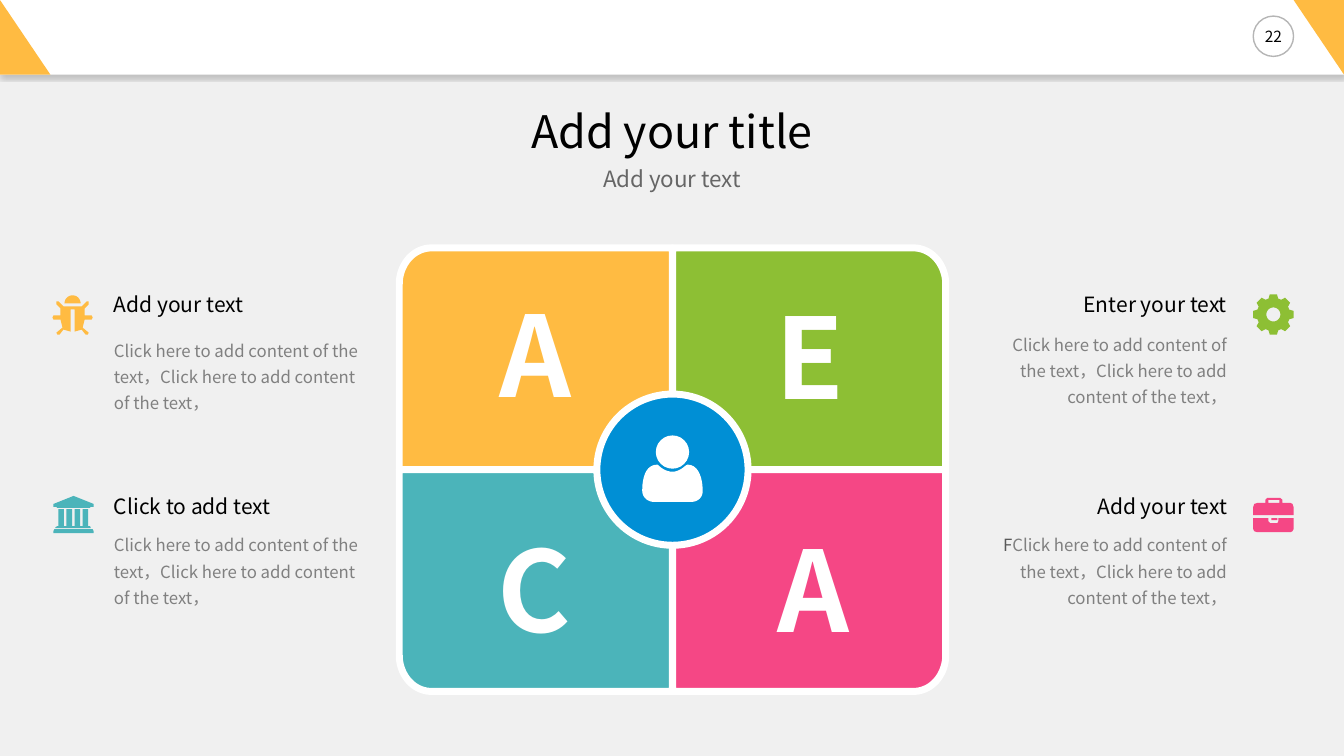
from dataclasses import dataclass
from math import cos, radians, sin

from lxml.etree import SubElement
from pptx import Presentation
from pptx.dml.color import RGBColor
from pptx.enum.shapes import MSO_SHAPE
from pptx.enum.text import MSO_ANCHOR, MSO_AUTO_SIZE, PP_ALIGN
from pptx.oxml.ns import qn
from pptx.util import Pt

PX = 9144  # EMU: 100 px to the inch
FINE = 20  # steps per px in free outlines
RECT, OVAL, WEDGE = MSO_SHAPE.RECTANGLE, MSO_SHAPE.OVAL, MSO_SHAPE.RIGHT_TRIANGLE
LEFT, MID, RIGHT = PP_ALIGN.LEFT, PP_ALIGN.CENTER, PP_ALIGN.RIGHT
TOP, HALF = MSO_ANCHOR.TOP, MSO_ANCHOR.MIDDLE
FIXED = MSO_AUTO_SIZE.NONE


@dataclass(frozen=True)
class Theme:
    font: str = "Noto Sans CJK JP"
    back: str = "F0F0F0"
    white: str = "FFFFFF"
    black: str = "000000"
    ring: str = "0D0D0D"
    dark: str = "595959"
    sub: str = "666666"
    gray: str = "808080"
    gold: str = "FFBB42"
    green: str = "8DBF34"
    teal: str = "4BB4BA"
    pink: str = "F54785"
    blue: str = "008FD5"
    huge: int = 80
    title: int = 32
    lead: int = 16
    head: int = 15
    body: int = 12
    page: int = 11
    edge: int = 5


def rgb(code):
    return RGBColor.from_string(code)


def box(x, y, w, h):
    return [(x, y), (x + w, y), (x + w, y + h), (x, y + h)]


def polar(x, y, rx, ry, deg):
    return x + rx * cos(radians(deg)), y + ry * sin(radians(deg))


def arc(x, y, rx, ry, start, end, steps=24):
    return [polar(x, y, rx, ry, start + (end - start) * i / steps)
            for i in range(steps + 1)]


def bend(pts, steps=10):
    """Sample a chain of cubic curves: a start, then three points for each."""
    out = [pts[0]]
    for k in range(0, len(pts) - 1, 3):
        for i in range(1, steps + 1):
            t = i / steps
            u = 1 - t
            mix = (u ** 3, 3 * u * u * t, 3 * u * t * t, t ** 3)
            out.append(tuple(sum(m * p[a] for m, p in zip(mix, pts[k:k + 4]))
                             for a in (0, 1)))
    return out


class Board:
    def __init__(self, deck, theme):
        self.theme = theme
        self.slide = deck.slides.add_slide(deck.slide_layouts[5])
        fill = self.slide.background.fill
        fill.solid()
        fill.fore_color.rgb = rgb(theme.back)

    def paint(self, shape, fill, line=None, width=0):
        shape.shadow.inherit = False
        shape.fill.solid()
        shape.fill.fore_color.rgb = rgb(fill)
        if line:
            shape.line.color.rgb = rgb(line)
            shape.line.width = Pt(width)
        else:
            shape.line.fill.background()
        return shape

    def shape(self, kind, area, *look):
        item = self.slide.shapes.add_shape(kind, *(v * PX for v in area))
        return self.paint(item, *look)

    def trace(self, paths, *look):
        """Draw closed outlines as one free shape."""
        fine = [[(x * FINE, y * FINE) for x, y in path] for path in paths]
        pen = self.slide.shapes.build_freeform(*fine[0][0], scale=PX / FINE)
        for i, path in enumerate(fine):
            if i:
                pen.move_to(*path[0])
            pen.add_line_segments(path[1:], close=True)
        return self.paint(pen.convert_to_shape(), *look)

    def label(self, shape, runs, size, align=MID, anchor=TOP, bold=False, **para):
        """Fill a shape with one paragraph of (text, colour) runs."""
        frame = shape.text_frame
        form = dict(word_wrap=True, auto_size=FIXED, vertical_anchor=anchor,
                    margin_left=0, margin_top=0, margin_right=0, margin_bottom=0)
        line = frame.paragraphs[0]
        for goal, vals in ((frame, form), (line, dict(alignment=align, **para))):
            for key, val in vals.items():
                setattr(goal, key, val)
        for text, tint in runs:
            run = line.add_run()
            run.text = text
            look = dict(name=self.theme.font, size=Pt(size), bold=bold)
            for key, val in look.items():
                setattr(run.font, key, val)
            run.font.color.rgb = rgb(tint)
        for props in shape.element.xpath(".//a:rPr"):
            SubElement(props, qn("a:ea"), typeface=self.theme.font)

    def text(self, area, *args, **form):
        item = self.slide.shapes.add_textbox(*(v * PX for v in area))
        self.label(item, *args, **form)

    def title(self, area, *args, **form):
        item = self.slide.shapes.title
        for key, val in zip(("left", "top", "width", "height"), area):
            setattr(item, key, val * PX)
        self.label(item, *args, **form)

    def fade(self, shape, percent):
        tint = shape.element.xpath(".//a:ln//a:srgbClr")[0]
        SubElement(tint, qn("a:alpha"), val=str(percent * 1000))

    def shade(self, shape, tint, percent, blur, dist):
        """Add a soft shadow that falls straight down."""
        soft = SubElement(shape.element.xpath(".//a:effectLst")[0],
                          qn("a:outerShdw"), blurRad=str(Pt(blur)),
                          dist=str(Pt(dist)), dir="5400000", algn="t",
                          rotWithShape="0")
        clr = SubElement(soft, qn("a:srgbClr"), val=tint)
        SubElement(clr, qn("a:alpha"), val=str(percent * 1000))


def bug():
    half = [(74, 329), (81, 327), (85, 332), (87, 332), (88, 330), (82, 325),
            (84, 317), (91, 317), (92, 315), (91, 313), (84, 313), (84, 306),
            (88, 302), (88, 299), (86, 299), (81, 304)]
    twin = [(144 - x, y) for x, y in reversed(half)]
    return [half + twin + [(70, 307), (74, 307)], arc(72, 301, 8, 8, 180, 360)]


def bank():
    roof = [(73, 492), (93, 500), (93, 503), (90, 503), (89, 504), (57, 504),
            (56, 503), (53, 503), (53, 500)]
    base = [(53, 529), (53, 527), (54, 525), (92, 525), (93, 527), (93, 529)]
    step = [(55, 524), (55, 523), (57, 522), (89, 522), (90, 523), (90, 524)]
    return [roof, base, step] + [box(x, 505, 5.5, 17) for x in range(58, 90, 8)]


def gear():
    x, y = 1263, 312
    tooth = ((16.5, -17), (20.3, -10), (20.3, 10), (16.5, 17))
    rim = [polar(x, y, r, r, 45 * k + d) for k in range(8) for r, d in tooth]
    return [rim, arc(x, y, 7, 7, 0, 360)]


def case():
    lid = [(1243, 511), (1243, 503), (1244, 500), (1247, 499), (1255, 499),
           (1255, 496), (1257, 494), (1270, 494), (1272, 496), (1272, 499),
           (1280, 499), (1282, 500), (1283, 503), (1283, 511)]
    base = [(1283, 514), (1283, 525), (1282, 527), (1280, 528), (1247, 528),
            (1244, 527), (1243, 525), (1243, 514), (1258, 514), (1258, 517),
            (1260, 519), (1267, 519), (1268, 517), (1268, 514)]
    return [lid, box(1258, 496, 11, 3), base, box(1261, 514, 6, 2)]


def person():
    body = [(685, 498), (673, 498), (661, 498), (649, 498), (642, 498),
            (637, 493), (637, 487), (637, 477), (639, 461), (652, 461),
            (653, 461), (658, 468), (667, 468), (675, 468), (680, 461),
            (682, 461), (694, 461), (697, 477), (697, 487), (697, 493),
            (693, 498), (685, 498)]
    return [bend(body), arc(667, 448.5, 16.5, 16.5, 0, 360)]


def main():
    deck = Presentation()
    deck.slide_width, deck.slide_height = 1333 * PX, 750 * PX
    th = Theme()
    b = Board(deck, th)

    bar = b.shape(RECT, (0, 0, 1333, 74), th.white)
    b.shade(bar, th.black, 20, 3, 2)
    ring = b.shape(OVAL, (1243, 16, 40, 40), th.white, th.ring, 1)
    b.fade(ring, 30)
    b.label(ring, [("22", th.black)], th.page, anchor=HALF)
    for x, turn in ((0, 0), (1283, 180)):
        b.shape(WEDGE, (x, 0, 50, 74), th.gold).rotation = turn

    b.title((50, 109, 1233, 54), [("Add your title", th.black)], th.title,
            line_spacing=0.9)
    b.text((50, 167, 1233, 27), [("Add your text", th.sub)], th.lead,
           line_spacing=0.9)

    cx, cy, w, h, rx, ry = 667, 466, 271, 220, 32, 36
    tiles = (("A", th.gold, -1, -1, 399, 283), ("E", th.green, 1, -1, 671, 285),
             ("C", th.teal, -1, 1, 398, 516), ("A", th.pink, 1, 1, 675, 516))
    for _, tint, sx, sy, _, _ in tiles:
        curve = [(cx + sx * x, cy + sy * y)
                 for x, y in arc(w - rx, h - ry, rx, ry, 0, 90)]
        b.trace([[(cx, cy), (cx + sx * w, cy), *curve, (cx, cy + sy * h)]],
                tint, th.white, th.edge)
    for mark, _, _, _, x, y in tiles:
        b.text((x, y, 264, 135), [(mark, th.white)], th.huge, bold=True)

    b.shape(OVAL, (592, 391, 150, 150), th.blue, th.white, th.edge)
    b.trace(person(), th.white)

    fill = ("Click here to add content of the text，" * 2, th.gray)
    notes = (
        ("Add your text", (113, 292, 252, 28), (113, 332, 252, 120), LEFT, [fill], bug(), th.gold),
        ("Click to add text", (113, 492, 252, 28), (113, 525, 252, 137), LEFT, [fill], bank(), th.teal),
        ("Enter your text", (967, 292, 250, 28), (986, 326, 231, 120), RIGHT, [fill], gear(), th.green),
        ("Add your text", (967, 492, 250, 28), (967, 525, 250, 137), RIGHT,
         [("F", th.dark), fill], case(), th.pink),
    )
    for head, spot, area, side, runs, icon, tint in notes:
        b.text(spot, [(head, th.black)], th.head, side, line_spacing=0.9)
        b.text(area, runs, th.body, side, line_spacing=1.3, space_before=Pt(10))
        b.trace(icon, tint)

    deck.save("out.pptx")


if __name__ == "__main__":
    main()
